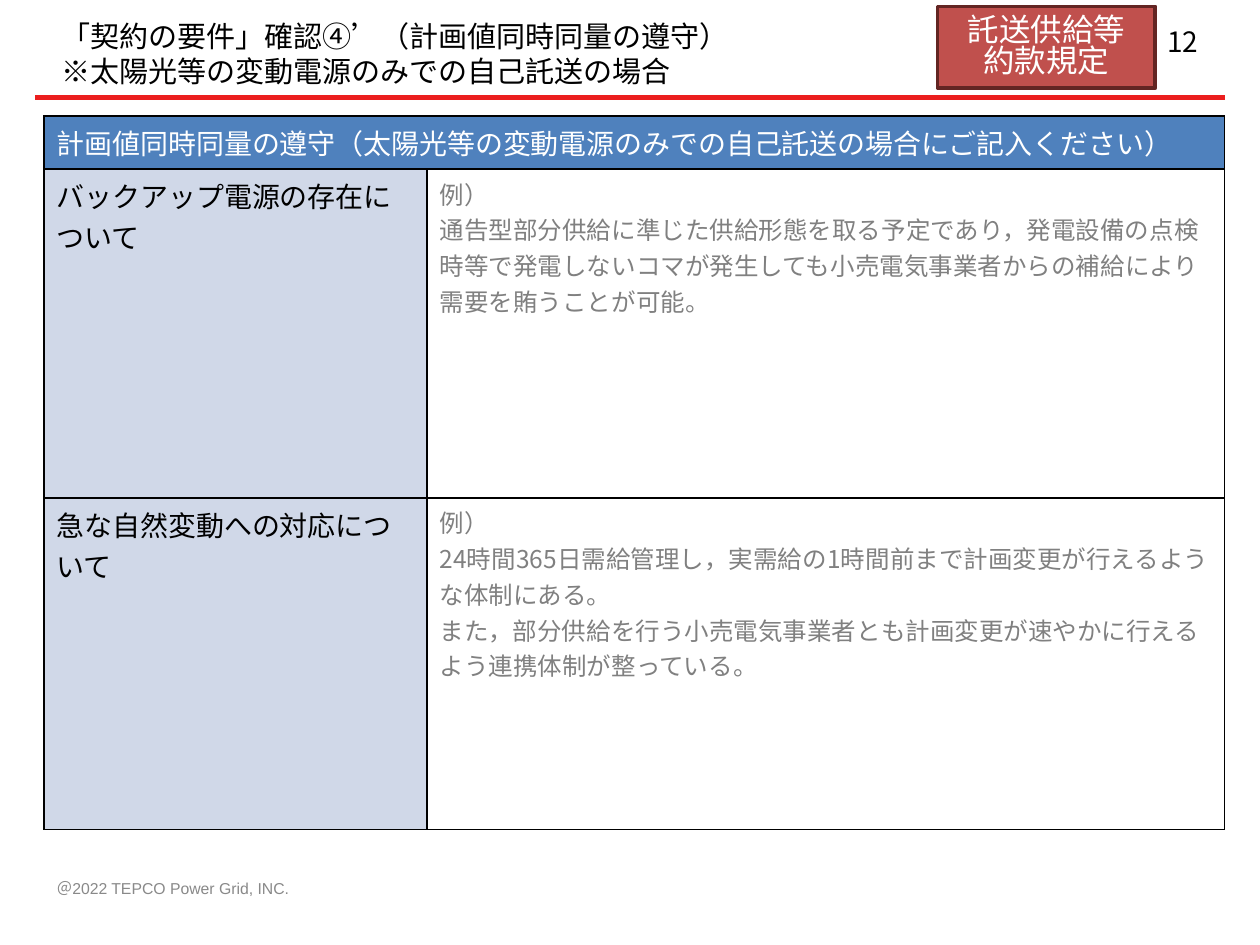
"""Build the slide on backup supply and response to sudden natural variation."""
import lxml.etree
import pptx
import pptx.dml.color
import pptx.enum.shapes
import pptx.enum.text
import pptx.oxml
import pptx.oxml.ns
import pptx.util

Cm = pptx.util.Cm
Pt = pptx.util.Pt
RGBColor = pptx.dml.color.RGBColor
Align = pptx.enum.text.PP_ALIGN
Anchor = pptx.enum.text.MSO_ANCHOR
qn = pptx.oxml.ns.qn

BLACK = RGBColor(0x00, 0x00, 0x00)
WHITE = RGBColor(0xFF, 0xFF, 0xFF)
RULE_RED = RGBColor(0xEB, 0x1E, 0x1E)
FOOTER_GREY = RGBColor(0x89, 0x89, 0x89)
EXAMPLE_GREY = RGBColor(0x80, 0x80, 0x80)
HEADER_BLUE = RGBColor(0x4F, 0x81, 0xBD)
TOPIC_BLUE = RGBColor(0xD0, 0xD8, 0xE8)
BADGE_RED = RGBColor(0xC0, 0x50, 0x4D)
BADGE_EDGE = RGBColor(0x63, 0x25, 0x23)

TITLE = ["「契約の要件」確認④’（計画値同時同量の遵守）",
         "※太陽光等の変動電源のみでの自己託送の場合"]
TABLE_HEADING = "計画値同時同量の遵守（太陽光等の変動電源のみでの自己託送の場合にご記入ください）"
TOPICS = [
    ("バックアップ電源の存在について",
     ["例）",
      "通告型部分供給に準じた供給形態を取る予定であり，発電設備の点検時等で発電しないコマが"
      "発生しても小売電気事業者からの補給により需要を賄うことが可能。"]),
    ("急な自然変動への対応について",
     ["例）",
      "24時間365日需給管理し，実需給の1時間前まで計画変更が行えるような体制にある。",
      "また，部分供給を行う小売電気事業者とも計画変更が速やかに行えるよう連携体制が整っている。"]),
]
COLUMN_WIDTHS = [7.72, 16.08]
ROW_HEIGHTS = [1.07, 6.63, 6.68]


class RequirementSlide:
    """Hold the font and the slide, and add each kind of element."""

    def __init__(self, presentation, font="Noto Sans CJK JP"):
        self.font = font
        self.slide = presentation.slides.add_slide(presentation.slide_layouts[5])

    def set_text(self, frame, lines, size, color, align=Align.LEFT, font=None,
                 spacing=None, anchor=None):
        frame.text = "\n".join(lines)
        frame.word_wrap = True
        if anchor is not None:
            frame.vertical_anchor = anchor
        for paragraph in frame.paragraphs:
            paragraph.alignment = align
            if spacing:
                paragraph.line_spacing = spacing
            paragraph.font.size = Pt(size)
            paragraph.font.color.rgb = color
            paragraph.font.name = font or self.font
            defaults = paragraph._p.pPr.find(qn("a:defRPr"))
            lxml.etree.SubElement(defaults, qn("a:ea")).set("typeface", self.font)

    def title(self, lines, left, top, width, height):
        title = self.slide.shapes.title
        title.left, title.top = Cm(left), Cm(top)
        title.width, title.height = Cm(width), Cm(height)
        frame = title.text_frame
        self.set_text(frame, lines, 16.6, BLACK, spacing=0.9, anchor=Anchor.TOP)
        frame.auto_size = pptx.enum.text.MSO_AUTO_SIZE.NONE
        for paragraph in frame.paragraphs[1:]:
            paragraph.space_before = Pt(2)

    def label(self, text, left, top, width, height, size, color, **style):
        box = self.slide.shapes.add_textbox(Cm(left), Cm(top), Cm(width), Cm(height))
        self.set_text(box.text_frame, [text], size, color, anchor=Anchor.MIDDLE, **style)

    def rule(self, left, right, y):
        line = self.slide.shapes.add_connector(
            pptx.enum.shapes.MSO_CONNECTOR.STRAIGHT, Cm(left), Cm(y), Cm(right), Cm(y))
        line.line.color.rgb = RULE_RED
        line.line.width = Pt(3)
        lxml.etree.SubElement(line._element.spPr, qn("a:effectLst"))

    def badge(self, lines, left, top, width, height):
        badge = self.slide.shapes.add_shape(
            pptx.enum.shapes.MSO_SHAPE.RECTANGLE,
            Cm(left), Cm(top), Cm(width), Cm(height))
        badge.shadow.inherit = False
        badge.fill.solid()
        badge.fill.fore_color.rgb = BADGE_RED
        badge.line.color.rgb = BADGE_EDGE
        badge.line.width = Pt(2)
        self.set_text(badge.text_frame, lines, 18, WHITE, align=Align.CENTER,
                      spacing=0.82, anchor=Anchor.MIDDLE)

    def cell(self, cell, lines, size, color, fill):
        self.set_text(cell.text_frame, lines, size, color)
        properties = cell._tc.get_or_add_tcPr()
        for side in "LRTB":
            border = lxml.etree.SubElement(properties, qn(f"a:ln{side}"), w=str(Pt(1)))
            paint = lxml.etree.SubElement(border, qn("a:solidFill"))
            lxml.etree.SubElement(paint, qn("a:srgbClr"), val=str(BLACK))
        cell.fill.solid()
        cell.fill.fore_color.rgb = fill

    def topic_table(self, heading, topics, left, top):
        table = self.slide.shapes.add_table(
            len(ROW_HEIGHTS), len(COLUMN_WIDTHS), Cm(left), Cm(top),
            Cm(sum(COLUMN_WIDTHS)), Cm(sum(ROW_HEIGHTS))).table
        for column, width in zip(table.columns, COLUMN_WIDTHS):
            column.width = Cm(width)
        for row, height in zip(table.rows, ROW_HEIGHTS):
            row.height = Cm(height)
        table.cell(0, 0).merge(table.cell(0, 1))
        self.cell(table.cell(0, 0), [heading], 16, WHITE, HEADER_BLUE)
        for row, (topic, example) in enumerate(topics, start=1):
            self.cell(table.cell(row, 0), [topic], 16, BLACK, TOPIC_BLUE)
            self.cell(table.cell(row, 1), example, 14, EXAMPLE_GREY, WHITE)


def main():
    presentation = pptx.Presentation()
    presentation.slide_width = Cm(25.4)
    presentation.slide_height = Cm(19.05)
    page = RequirementSlide(presentation)
    page.rule(0.71, 24.69, 1.96)
    page.label("＠2022 TEPCO Power Grid, INC.", 0.89, 17.4, 9.8, 1.02, 9,
               FOOTER_GREY, font="Arial")
    page.label("12", 18.49, 0.33, 5.92, 1.02, 16, BLACK, align=Align.RIGHT)
    page.topic_table(TABLE_HEADING, TOPICS, 0.89, 2.34)
    page.title(TITLE, 0.99, 0.33, 21.11, 1.78)
    page.badge(["託送供給等", "約款規定"], 18.9, 0.13, 4.39, 1.65)
    presentation.save("out.pptx")


if __name__ == "__main__":
    main()
